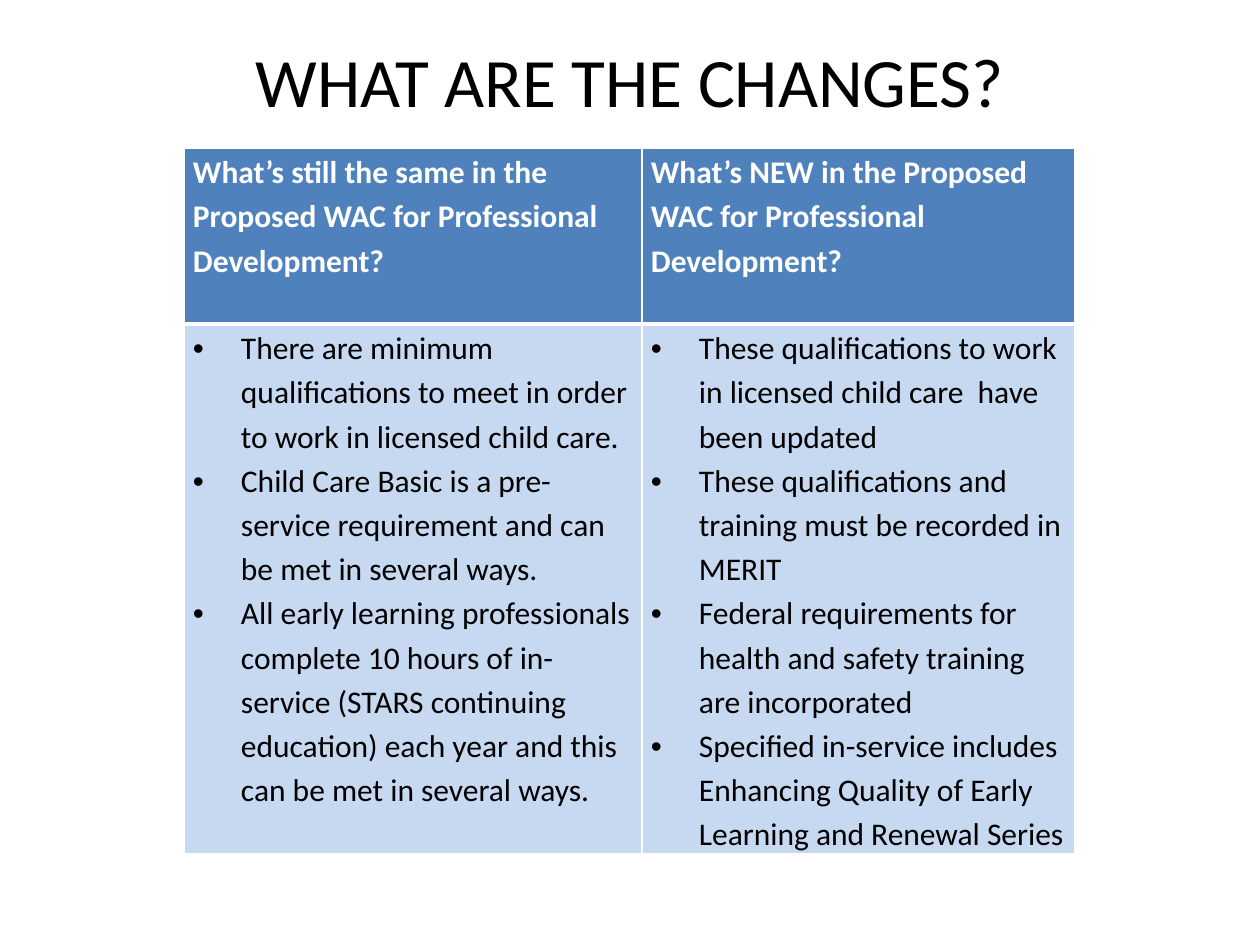
from lxml.etree import SubElement
from pptx import Presentation
from pptx.dml.color import RGBColor
from pptx.enum.text import MSO_ANCHOR as Anchor, PP_ALIGN as Align
from pptx.oxml.ns import qn
from pptx.util import Pt

TITLE = "WHAT ARE THE CHANGES?"
HEADS = [
    "What’s still the same in the Proposed WAC for Professional Development?",
    "What’s NEW in the Proposed WAC for Professional Development?",
]
POINTS = [
    [
        "There are minimum qualifications to meet in order to work in licensed child care.",
        "Child Care Basic is a pre-service requirement and can be met in several ways.",
        "All early learning professionals complete 10 hours of in-service "
        "(STARS continuing education) each year and this can be met in several ways.",
    ],
    [
        "These qualifications to work in licensed child care  have been updated",
        "These qualifications and training must be recorded in MERIT",
        "Federal requirements for health and safety training are incorporated",
        "Specified in-service includes Enhancing Quality of Early Learning and Renewal Series",
    ],
]
COLS = [458, 433]
ROWS = [176, 530]

FONT = "Calibri"
BLACK = RGBColor(0x00, 0x00, 0x00)
WHITE = RGBColor(0xFF, 0xFF, 0xFF)
BLUE = RGBColor(0x4F, 0x81, 0xBD)
PALE = RGBColor(0xC6, 0xD9, 0xF1)


def px(n):
    return n * 914400 // 126


def write(para, text, size, color, bold=False):
    run = para.add_run()
    run.text = text
    font = run.font
    font.name, font.size, font.bold = FONT, Pt(size), bold
    font.color.rgb = color


def bullet(para):
    props = para._p.get_or_add_pPr()
    props.set("marL", str(px(48)))
    props.set("indent", str(-px(48)))
    SubElement(props, qn("a:buFont"), typeface="Arial")
    SubElement(props, qn("a:buChar"), char="•")


def border(cell, widths):
    """Draw white edges; widths maps L, R, T, B to points."""
    props = cell._tc.get_or_add_tcPr()
    for side, width in widths.items():
        line = SubElement(props, qn("a:ln" + side), w=str(Pt(width)))
        fill = SubElement(line, qn("a:solidFill"))
        SubElement(fill, qn("a:srgbClr"), val=str(WHITE))


def fill_cell(cell, lines, back, color, head):
    border(cell, {"L": 1, "R": 1, "T": 1 if head else 3, "B": 3 if head else 1})
    cell.fill.solid()
    cell.fill.fore_color.rgb = back
    cell.margin_left = cell.margin_right = px(9)
    cell.margin_top = cell.margin_bottom = 0
    frame = cell.text_frame
    for i, text in enumerate(lines):
        para = frame.add_paragraph() if i else frame.paragraphs[0]
        para.line_spacing = 1.15
        if not head:
            bullet(para)
        write(para, text, 18, color, head)


def add_title(slide):
    box = slide.shapes.add_textbox(px(63), px(38), px(1134), px(157))
    frame = box.text_frame
    frame.word_wrap = True
    frame.vertical_anchor = Anchor.TOP
    frame.margin_top = 0
    para = frame.paragraphs[0]
    para.alignment = Align.CENTER
    write(para, TITLE, 39.6, BLACK)


def add_grid(slide):
    table = slide.shapes.add_table(
        len(ROWS), len(COLS), px(184), px(148), px(sum(COLS)), px(sum(ROWS))
    ).table
    for row, height in zip(table.rows, ROWS):
        row.height = px(height)
    for c, width in enumerate(COLS):
        table.columns[c].width = px(width)
        fill_cell(table.cell(0, c), [HEADS[c]], BLUE, WHITE, True)
        fill_cell(table.cell(1, c), POINTS[c], PALE, BLACK, False)


def main():
    deck = Presentation()
    deck.slide_width, deck.slide_height = px(1260), px(945)
    slide = deck.slides.add_slide(deck.slide_layouts[6])
    add_title(slide)
    add_grid(slide)
    deck.save("out.pptx")


if __name__ == "__main__":
    main()
